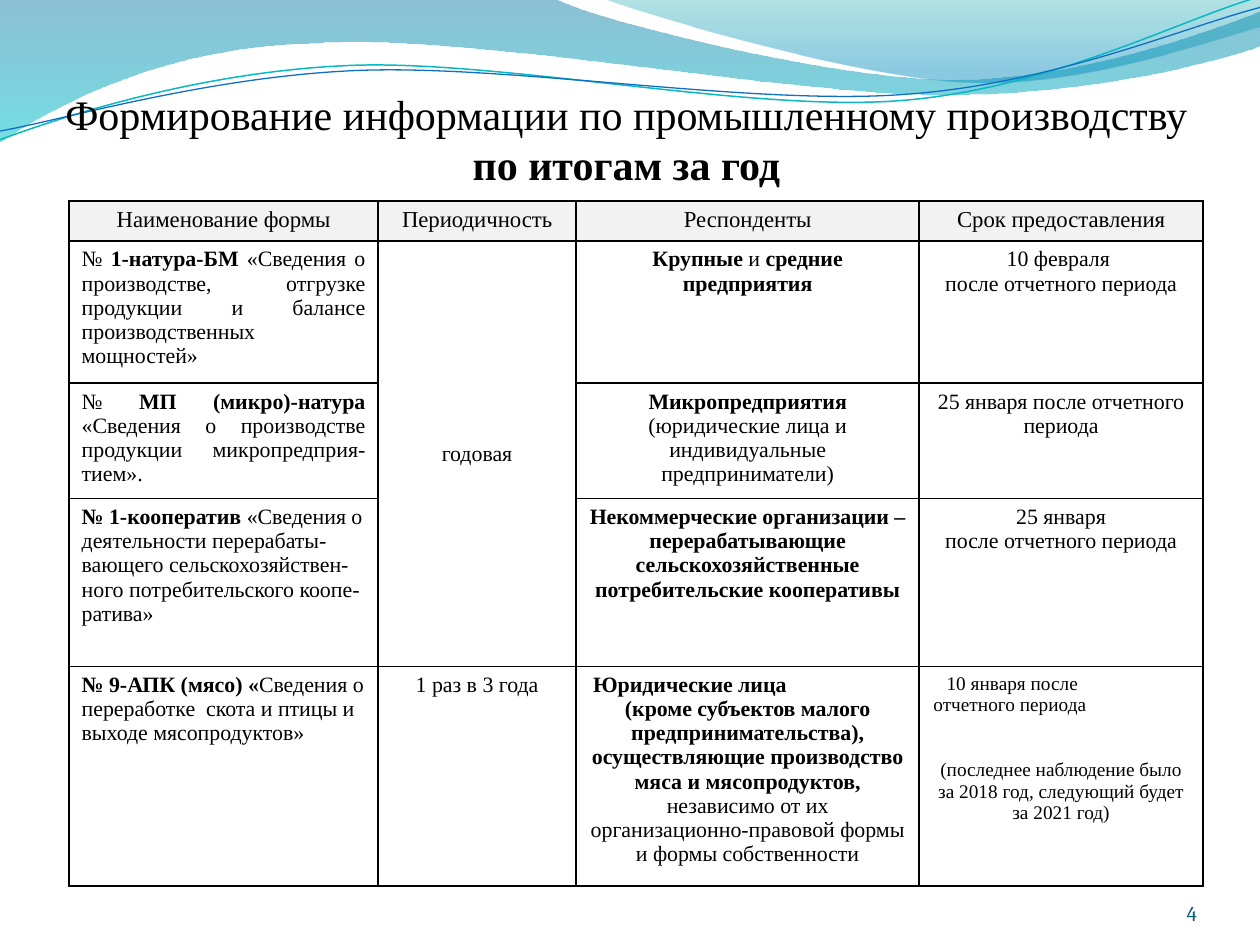
from math import cos, radians, sin

from lxml import etree
from pptx import Presentation
from pptx.dml.color import RGBColor
from pptx.enum.text import MSO_ANCHOR as ANCHOR, MSO_AUTO_SIZE as AUTO, PP_ALIGN as AL
from pptx.oxml import parse_xml
from pptx.oxml.ns import nsdecls, qn
from pptx.util import Pt

SERIF = "Times New Roman"


def rgb(value):
    return RGBColor.from_string(value)


def add_text(p, parts, size, align=AL.CENTER, font=SERIF, color="000000"):
    """Fill a paragraph with (text, bold) runs."""
    p.alignment = align
    for text, bold in parts:
        r = p.add_run()
        r.text = text
        r.font.size, r.font.bold, r.font.name = Pt(size), bold, font
        r.font.color.rgb = rgb(color)


prs = Presentation()
prs.slide_width, prs.slide_height = Pt(720), Pt(540)
s = prs.slides.add_slide(prs.slide_layouts[5])

# Waves: points in inches; two numbers make a line, six make a Bézier curve.
# Gradient stops are (position %, colour, opacity %).
# Lines are (colour, width, centre of the turn), turned by TILT degrees.
TILT = -2.7
waves = [
    ([(0, 0), (4.4, -.01), (4.76, .17, 6.64, .63, 7.58, .63),
      (8.53, .63, 9.58, .26, 10, .09), (10.01, .36),
      (9.83, .44, 8.7, .76, 7.46, .75), (6.22, .75, 3.82, .28, 2.57, .34),
      (1.29, .36, .46, .83, -.01, 1.13), (0, 0)],
     [(0, "0074A1", 45), (100, "00C6CF", 55)], None),
    ([(4.79, -.01), (5.09, .11, 6.82, .62, 7.69, .65),
      (8.56, .69, 9.61, .32, 10, .21), (10, 0), (4.79, -.01)],
     [(0, "00A1A9", 30), (80, "008BBF", 45)], None),
    ([(0, 1.11), (.48, .93, 1.58, .57, 2.77, .52),
      (3.95, .47, 5.93, .89, 7.13, .8), (8.33, .71, 9.38, .15, 9.98, -.02)],
     None, ("0AB8BF", .85, (4.99, .57))),
    ([(0, 1.04), (.47, .96, 1.64, .61, 2.83, .56),
      (4.03, .51, 5.97, .84, 7.17, .75), (8.36, .67, 9.41, .21, 10, .06)],
     None, ("0F6FC6", .75, (5, .59))),
]
for segments, stops, line in waves:
    points = [seg[k:k + 2] for seg in segments for k in range(0, len(seg), 2)]
    if line:
        cx, cy = line[2]
        c, d = cos(radians(TILT)), sin(radians(TILT))
        points = [(cx + (x - cx) * c + (y - cy) * d, cy - (x - cx) * d + (y - cy) * c)
                  for x, y in points]
    points = [(Pt(72 * x), Pt(72 * y)) for x, y in points]
    fb = s.shapes.build_freeform(*points[0], scale=1.0)
    fb.add_line_segments(points[1:], close=stops is not None)
    sp = fb.convert_to_shape()
    # Turn each run of three line points into one cubic curve.
    lines = iter(list(sp._element.iter(qn("a:lnTo"))))
    for seg in segments[1:]:
        first = next(lines)
        if len(seg) == 6:
            first.tag = qn("a:cubicBezTo")
            for _ in range(2):
                extra = next(lines)
                first.append(extra[0])
                extra.getparent().remove(extra)
    sp.shadow.inherit = False
    sp.fill.background()
    if stops:
        sp.line.fill.background()
        gs = "".join(f'<a:gs pos="{pos * 1000}"><a:srgbClr val="{color}"><a:alpha val="{a * 1000}"/>'
                     "</a:srgbClr></a:gs>" for pos, color, a in stops)
        no_fill = sp._element.spPr.find(qn("a:noFill"))
        no_fill.getparent().replace(no_fill, parse_xml(
            f'<a:gradFill {nsdecls("a")} rotWithShape="1"><a:gsLst>{gs}</a:gsLst>'
            '<a:lin ang="5400000" scaled="0"/></a:gradFill>'))
    else:
        sp.line.color.rgb, sp.line.width = rgb(line[0]), Pt(line[1])
        # The turn is about the box centre, so set that to the turned place.
        mid_x, mid_y = sp.left + sp.width / 2 - Pt(72 * cx), sp.top + sp.height / 2 - Pt(72 * cy)
        sp.left = int(Pt(72 * cx) + mid_x * c - mid_y * d - sp.width / 2)
        sp.top = int(Pt(72 * cy) + mid_x * d + mid_y * c - sp.height / 2)
        sp.rotation = TILT

title = s.shapes.title
s.shapes._spTree.append(title._element)  # in front of the waves
title.left, title.top, title.width, title.height = Pt(34), Pt(56), Pt(648), Pt(52)
tf = title.text_frame
tf.word_wrap, tf.auto_size, tf.vertical_anchor = True, AUTO.NONE, ANCHOR.BOTTOM
tf.margin_left = tf.margin_right = tf.margin_bottom = 0
tf.margin_top = Pt(3.6)
add_text(tf.paragraphs[0], [("Формирование информации по промышленному производству ", False),
                            ("по итогам за год", True)], 24)

# Each cell is a list of paragraphs, each paragraph a list of (text, bold) runs.
after_period = [("после отчетного периода", False)]
rows = [
    [[[(head, False)]] for head in
     ("Наименование формы", "Периодичность", "Респонденты", "Срок предоставления")],
    [[[("№ ", False), ("1-натура-БМ ", True),
       ("«Сведения о производстве, отгрузке продукции и балансе производственных мощностей»", False)]],
     [[("годовая", False)]],
     [[("Крупные ", True), ("и", False), (" средние предприятия", True)]],
     [[("10 февраля ", False)], after_period]],
    [[[("№ ", False), ("МП (микро)-натура ", True),
       ("«Сведения о производстве продукции микропредприя-тием».", False)]],
     [],
     [[("Микропредприятия", True),
       (" (юридические лица и индивидуальные предприниматели)", False)]],
     [[("25 января после отчетного периода", False)]]],
    [[[("№ 1-кооператив ", True),
       ("«Сведения о деятельности перерабаты-вающего сельскохозяйствен-ного "
        "потребительского коопе-ратива»", False)]],
     [],
     [[("Некоммерческие организации – перерабатывающие сельскохозяйственные "
        "потребительские кооперативы", True)]],
     [[("25 января", False)], after_period]],
    [[[("№ 9-АПК (мясо) «", True),
       ("Сведения о переработке  скота и птицы и выходе мясопродуктов»", False)]],
     [[("1 раз в 3 года", False)]],
     [[("Юридические лица", True)],
      [("(кроме субъектов малого предпринимательства), осуществляющие производство "
        "мяса и мясопродуктов, ", True),
       ("независимо от их организационно-правовой формы и формы собственности", False)]],
     [[("10 января после", False)], [("отчетного периода", False)],
      [("(последнее наблюдение было за 2018 год, следующий будет за 2021 год)", False)]]],
]
col_widths = [176.5, 113.25, 196, 162.25]
row_heights = [23, 81.25, 66, 96, 125.25]
frame = s.shapes.add_table(5, 4, Pt(39.5), Pt(114.75), Pt(sum(col_widths)), Pt(sum(row_heights)))
table = frame.table
for col, width in zip(table.columns, col_widths):
    col.width = Pt(width)
for row, height in zip(table.rows, row_heights):
    row.height = Pt(height)

for i, row in enumerate(rows):
    for j, paragraphs in enumerate(row):
        cell = table.cell(i, j)
        for side in ("L", "R", "T", "B"):
            ln = etree.SubElement(cell._tc.get_or_add_tcPr(), qn(f"a:ln{side}"), w=str(Pt(1)))
            fill = etree.SubElement(ln, qn("a:solidFill"))
            etree.SubElement(fill, qn("a:srgbClr"), val="000000")
        cell.fill.background()
        if i == 0:
            cell.fill.solid()
            cell.fill.fore_color.rgb = rgb("F2F2F2")
        align = AL.CENTER
        if j == 0 and i > 0:
            align = AL.JUSTIFY if i < 3 else AL.LEFT
        size = 13 if i == 0 else 11 if (i, j) == (4, 3) else 12.5
        for n, parts in enumerate(paragraphs):
            p = cell.text_frame.paragraphs[0] if n == 0 else cell.text_frame.add_paragraph()
            add_text(p, parts, size, align)

table.cell(1, 1).merge(table.cell(3, 1))
table.cell(1, 1).vertical_anchor = ANCHOR.MIDDLE

# Opening lines of the last row stand left of the centred text.
for j, n, indent in ((2, 0, 2.5), (3, 0, 8.5), (3, 1, 1)):
    p = table.cell(4, j).text_frame.paragraphs[n]
    p.alignment = AL.LEFT
    p._p.get_or_add_pPr().set("marL", str(Pt(indent)))
table.cell(4, 3).text_frame.paragraphs[2].space_before = Pt(25)

number = s.shapes.add_textbox(Pt(624), Pt(500.5), Pt(60), Pt(28.75))
tf = number.text_frame
tf.word_wrap, tf.vertical_anchor = True, ANCHOR.BOTTOM
tf.margin_left = tf.margin_right = tf.margin_top = tf.margin_bottom = 0
add_text(tf.paragraphs[0], [("4", False)], 12, AL.RIGHT, "Cambria", "045D75")

prs.save("out.pptx")
